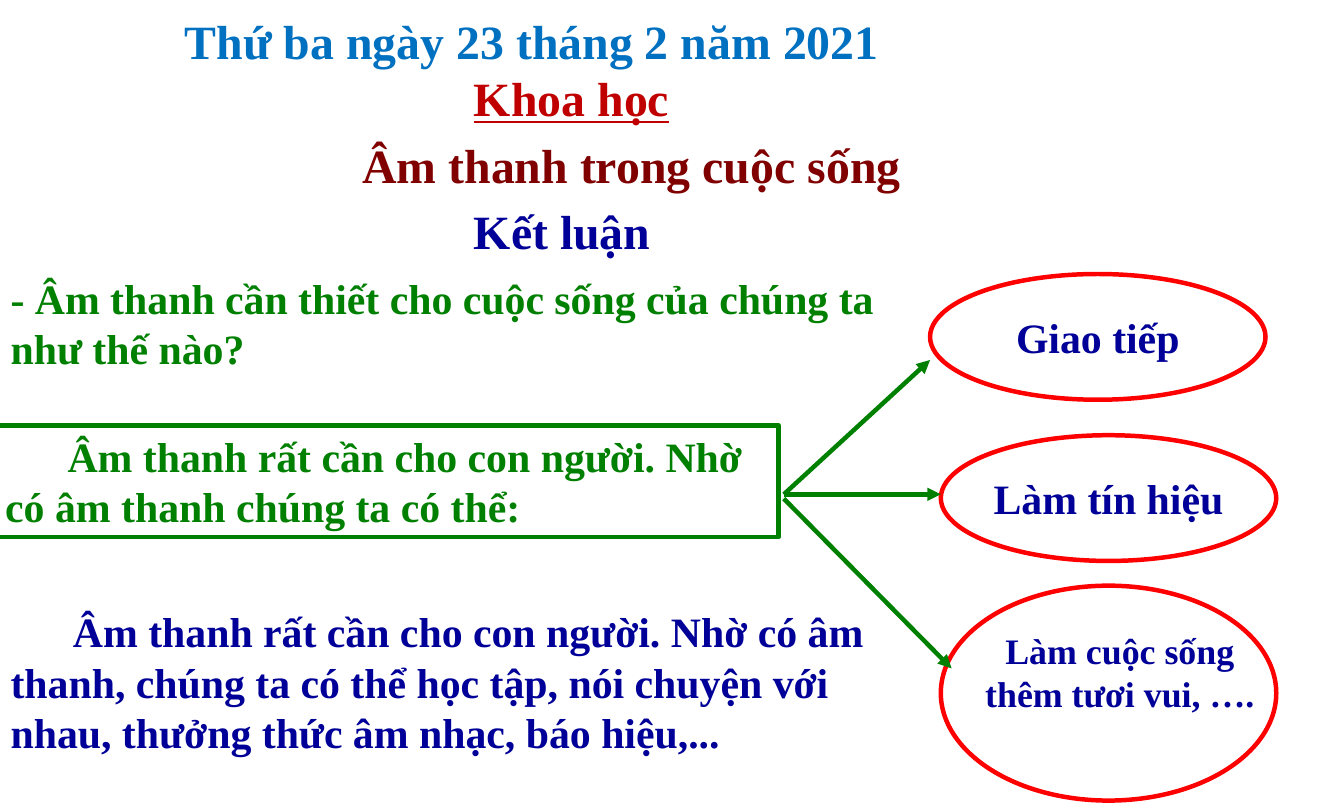
from lxml import etree
from pptx import Presentation
from pptx import util as u
from pptx.dml.color import RGBColor
from pptx.enum import shapes, text
from pptx.oxml.ns import qn

NAVY = RGBColor(0x00, 0x00, 0x99)
GREEN = RGBColor(0x00, 0x80, 0x00)
RED = RGBColor(0xFF, 0x00, 0x00)
BLUE = RGBColor(0x00, 0x70, 0xC0)
CRIMSON = RGBColor(0xC0, 0x00, 0x00)
MAROON = RGBColor(0x80, 0x00, 0x00)
FONT = "Times New Roman"
FIRST_LINE = 0.58
LEFT, CENTER = text.PP_ALIGN.LEFT, text.PP_ALIGN.CENTER


def write(para, words, size=28, color=NAVY, align=LEFT, underline=False, indent=0):
    """Fill a paragraph with one bold run; indent moves its first line (inches)."""
    para.alignment = align
    if indent:
        properties = para._p.get_or_add_pPr()
        properties.set("marL", "0")
        properties.set("indent", str(u.Inches(indent)))
    span = para.add_run()
    span.text = words
    span.font.name = FONT
    span.font.size = u.Pt(size)
    span.font.bold = True
    span.font.underline = underline
    span.font.color.rgb = color


def add_text(page, place, words, **style):
    box = page.shapes.add_textbox(*map(u.Inches, place))
    box.text_frame.word_wrap = True
    write(box.text_frame.paragraphs[0], words, **style)
    return box


def add_outline(page, kind, place, color):
    shape = page.shapes.add_shape(kind, *map(u.Inches, place))
    shape.shadow.inherit = False
    shape.fill.background()
    shape.line.color.rgb = color
    shape.line.width = u.Pt(3)
    return shape


def add_arrow(page, start, end):
    arrow = page.shapes.add_connector(
        shapes.MSO_CONNECTOR.STRAIGHT, *map(u.Inches, start + end))
    arrow.line.color.rgb = GREEN
    arrow.line.width = u.Pt(3)
    outline = arrow.line._get_or_add_ln()
    etree.SubElement(outline, qn("a:tailEnd"), type="triangle")
    etree.SubElement(arrow._element.spPr, qn("a:effectLst"))


def main():
    deck = Presentation()
    deck.slide_width, deck.slide_height = u.Inches(12.5), u.Inches(7.5)
    page = deck.slides.add_slide(deck.slide_layouts[6])

    # Uses of sound
    for left, top, height, words in (
        (8.65, 2.55, 1.17, "Giao tiếp"),
        (8.75, 4.05, 1.17, "Làm tín hiệu"),
        (8.75, 5.45, 2, None),
    ):
        oval = add_outline(page, shapes.MSO_SHAPE.OVAL, (left, top, 3.12, height), RED)
        if words:
            frame = oval.text_frame
            frame.word_wrap = False
            frame.vertical_anchor = text.MSO_ANCHOR.MIDDLE
            write(frame.paragraphs[0], words, align=CENTER)

    # Arrows from the statement to its uses
    for start, end in (
        ((7.29, 4.6), (8.65, 3.35)),
        ((7.29, 4.6), (8.75, 4.6)),
        ((7.29, 4.64), (8.85, 6.22)),
    ):
        add_arrow(page, start, end)
    add_text(page, (9.06, 5.8, 2.71, 0.91), "Làm cuộc sống thêm tươi vui, ….",
             size=24, align=CENTER)

    # Framed statement
    statement = add_outline(page, shapes.MSO_SHAPE.RECTANGLE,
                            (-0.05, 3.96, 7.29, 1.04), GREEN)
    statement.text_frame.word_wrap = True
    statement.text_frame.vertical_anchor = text.MSO_ANCHOR.TOP
    write(statement.text_frame.paragraphs[0],
          "Âm thanh rất cần cho con người. Nhờ có âm thanh chúng ta có thể:",
          color=GREEN, indent=FIRST_LINE)

    # Conclusion and question
    add_text(page, (0, 5.59, 8.44, 1.51),
             "Âm thanh rất cần cho con người. Nhờ có âm thanh, chúng ta có thể "
             "học tập, nói chuyện với nhau, thưởng thức âm nhạc, báo hiệu,...",
             indent=FIRST_LINE)
    add_text(page, (0, 2.49, 8.23, 1.03),
             "- Âm thanh cần thiết cho cuộc sống của chúng ta như thế nào?",
             color=GREEN)

    # Headings
    add_text(page, (4.31, 1.83, 2.6, 0.64), "Kết luận", size=32)
    heading = add_text(page, (0.75, 0.06, 11.25, 1.72),
                       "Thứ ba ngày 23 tháng 2 năm 2021",
                       size=32, color=BLUE, indent=0.87)
    write(heading.text_frame.add_paragraph(), "Khoa học",
          size=32, color=CRIMSON, underline=True, indent=3.56)
    add_text(page, (0.25, 1.21, 11.25, 1.42), "Âm thanh trong cuộc sống",
             size=32, color=MAROON, align=CENTER)

    deck.save("out.pptx")


if __name__ == "__main__":
    main()
